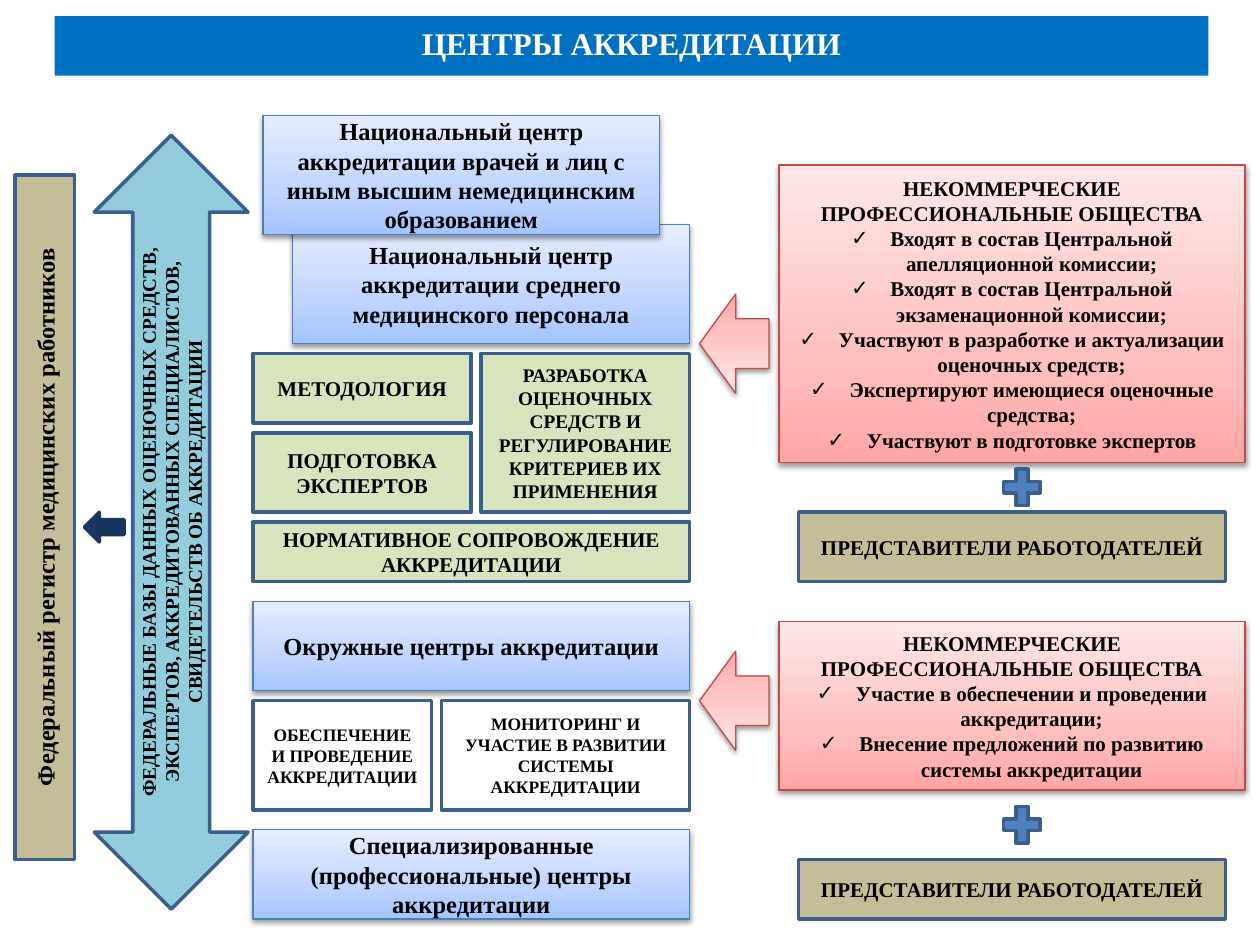
from copy import deepcopy
from typing import NamedTuple

from lxml.etree import SubElement
from pptx import Presentation
from pptx.dml.color import RGBColor
from pptx.enum.shapes import MSO_SHAPE
from pptx.enum.text import MSO_ANCHOR, PP_ALIGN
from pptx.oxml.ns import qn
from pptx.util import Inches, Mm, Pt

CELL = Mm(2)
LEFT_MARGIN = Inches(0.04)
TOP_MARGIN = Inches(0.05)
FONT = "Times New Roman"

BLACK = RGBColor(0x00, 0x00, 0x00)
WHITE = RGBColor(0xFF, 0xFF, 0xFF)
TITLE_BLUE = RGBColor(0x00, 0x70, 0xC0)
PLUS_BLUE = RGBColor(0x4F, 0x81, 0xBD)
EDGE_BLUE = RGBColor(0x3A, 0x5F, 0x8C)
NAVY = RGBColor(0x17, 0x37, 0x5E)
AQUA = RGBColor(0x93, 0xCD, 0xDD)
GREEN = RGBColor(0xD7, 0xE4, 0xBD)
TAN = RGBColor(0xC4, 0xBD, 0x97)
CENTER_EDGE = RGBColor(0x4B, 0x7E, 0xBC)
SOCIETY_EDGE = RGBColor(0xBF, 0x4C, 0x48)
CENTER_BLUES = (
    RGBColor(0xA4, 0xC4, 0xFF), RGBColor(0xBF, 0xD4, 0xFF), RGBColor(0xE6, 0xEE, 0xFF))
SOCIETY_REDS = (
    RGBColor(0xFF, 0xA6, 0xA5), RGBColor(0xFF, 0xC0, 0xBF), RGBColor(0xFF, 0xE7, 0xE7))


class Box(NamedTuple):
    """An area of the grid, in columns and rows."""
    column: float
    row: float
    width: float
    height: float

    def inner(self, column, row, width, height):
        """Return an area placed relative to this one."""
        return Box(self.column + column, self.row + row, width, height)


def add_block(page, box, fill=None, edge=EDGE_BLUE, weight=2, kind=MSO_SHAPE.RECTANGLE):
    """Draw a flat preset shape over a grid area."""
    shape = page.shapes.add_shape(
        kind, LEFT_MARGIN + int(box.column * CELL), TOP_MARGIN + int(box.row * CELL),
        int(box.width * CELL), int(box.height * CELL))
    shape.shadow.inherit = False
    if fill is None:
        shape.fill.background()
    else:
        shape.fill.solid()
        shape.fill.fore_color.rgb = fill
    if edge is None:
        shape.line.fill.background()
    else:
        shape.line.color.rgb = edge
        shape.line.width = Pt(weight)
    return shape


def add_raised_block(page, box, colors, edge, kind=MSO_SHAPE.RECTANGLE):
    """Draw a shape with a vertical gradient and a soft shadow."""
    shape = add_block(page, box, edge=edge, weight=0.75, kind=kind)
    shape.fill.gradient()
    shape.fill.gradient_angle = 90
    properties = shape._element.spPr
    stop_list = properties.find(qn("a:gradFill")).find(qn("a:gsLst"))
    stop_list.append(deepcopy(stop_list[-1]))
    for stop, color, position in zip(shape.fill.gradient_stops, colors, (0, 0.35, 1)):
        stop.color.rgb = color
        stop.position = position
    shadow = SubElement(
        properties.find(qn("a:effectLst")), qn("a:outerShdw"), blurRad=str(Pt(3.1)),
        dist=str(Pt(1.6)), dir="5400000", rotWithShape="0")
    shadow_color = SubElement(shadow, qn("a:srgbClr"), val="000000")
    SubElement(shadow_color, qn("a:alpha"), val="38000")
    return shape


def write(shape, *lines, size=12, color=BLACK, bullets=(), spacing=None, upward=False):
    """Write centred bold paragraphs, then check-marked ones, into a shape."""
    frame = shape.text_frame
    frame.word_wrap = True
    frame.vertical_anchor = MSO_ANCHOR.MIDDLE
    if upward:
        frame._txBody.bodyPr.set("vert", "vert270")
    for index, text in enumerate((*lines, *bullets)):
        para = frame.add_paragraph() if index else frame.paragraphs[0]
        para.alignment = PP_ALIGN.CENTER
        if spacing:
            para.line_spacing = spacing
        if index >= len(lines):
            properties = para._p.get_or_add_pPr()
            properties.set("marL", str(Pt(22.5)))
            properties.set("indent", str(-Pt(22.5)))
            SubElement(properties, qn("a:buFont"), typeface="Arial")
            SubElement(properties, qn("a:buChar"), char="✓")
        span = para.add_run()
        span.text = text
        span.font.name = FONT
        span.font.size = Pt(size)
        span.font.bold = True
        span.font.color.rgb = color


def add_title(page, box):
    """Draw the title band."""
    band = add_block(page, box, TITLE_BLUE, edge=None)
    write(band, "ЦЕНТРЫ АККРЕДИТАЦИИ", size=18, color=WHITE, spacing=0.8)


def add_center(page, box, text):
    """Draw one accreditation center."""
    write(add_raised_block(page, box, CENTER_BLUES, CENTER_EDGE), text, size=14)


def add_registry(page, box):
    """Draw the federal registry, the databases and the arrow between them."""
    databases = add_block(
        page, box.inner(8, -4, 15.5, box.height + 9), AQUA, kind=MSO_SHAPE.UP_DOWN_ARROW)
    write(databases, "ФЕДЕРАЛЬНЫЕ БАЗЫ ДАННЫХ ОЦЕНОЧНЫХ СРЕДСТВ, ЭКСПЕРТОВ, "
          "АККРЕДИТОВАННЫХ СПЕЦИАЛИСТОВ, СВИДЕТЕЛЬСТВ ОБ АККРЕДИТАЦИИ",
          size=11, upward=True)
    add_block(page, box.inner(7, 34, 4, 3), NAVY, edge=NAVY, kind=MSO_SHAPE.LEFT_ARROW)
    registry = add_block(page, box.inner(0, 0, 6, box.height), TAN)
    write(registry, "Федеральный регистр медицинских работников", size=14, upward=True)


def add_national_level(page, box):
    """Draw the two national centers and their tasks."""
    add_center(page, box.inner(4, 11, 40, 12),
               "Национальный центр аккредитации среднего медицинского персонала")
    add_center(page, box.inner(1, 0, 40, 12),
               "Национальный центр аккредитации врачей и лиц с иным высшим "
               "немедицинским образованием")
    tasks = (
        ((0, 24, 22, 7), 12, ("МЕТОДОЛОГИЯ",)),
        ((0, 32, 22, 8), 12, ("ПОДГОТОВКА ЭКСПЕРТОВ",)),
        ((23, 24, 21, 16), 11, ("РАЗРАБОТКА", "ОЦЕНОЧНЫХ",
                                "СРЕДСТВ И РЕГУЛИРОВАНИЕ КРИТЕРИЕВ ИХ ПРИМЕНЕНИЯ")),
        ((0, 41, box.width, 6), 12, ("НОРМАТИВНОЕ СОПРОВОЖДЕНИЕ АККРЕДИТАЦИИ",)),
    )
    for area, size, lines in tasks:
        write(add_block(page, box.inner(*area), GREEN), *lines, size=size)


def add_district_level(page, box):
    """Draw the district centers and their two tasks."""
    add_center(page, box.inner(0, 0, box.width, 9), "Окружные центры аккредитации")
    tasks = (
        ((0, 10, 18, 11), "ОБЕСПЕЧЕНИЕ И ПРОВЕДЕНИЕ АККРЕДИТАЦИИ"),
        ((19, 10, 25, 11), "МОНИТОРИНГ И УЧАСТИЕ В РАЗВИТИИ СИСТЕМЫ АККРЕДИТАЦИИ"),
    )
    for area, text in tasks:
        write(add_block(page, box.inner(*area)), text, size=10)


def add_partners(page, box, society_rows, employer_rows, arrow_row, duties):
    """Draw the societies, a plus, the employers and an arrow to the centers."""
    society = add_raised_block(
        page, box.inner(8, 0, 47, society_rows), SOCIETY_REDS, SOCIETY_EDGE)
    write(society, "НЕКОММЕРЧЕСКИЕ ПРОФЕССИОНАЛЬНЫЕ ОБЩЕСТВА", bullets=duties)
    employer_row = box.height - employer_rows
    plus_row = (society_rows + employer_row - 5) / 2
    add_block(page, box.inner(30, plus_row, 5, 5), PLUS_BLUE, kind=MSO_SHAPE.MATH_PLUS)
    employers = add_block(page, box.inner(10, employer_row, 43, employer_rows), TAN)
    write(employers, "ПРЕДСТАВИТЕЛИ РАБОТОДАТЕЛЕЙ")
    arrow = add_raised_block(page, box.inner(0, arrow_row, 7, 10), SOCIETY_REDS,
                             SOCIETY_EDGE, kind=MSO_SHAPE.RIGHT_ARROW)
    arrow.rotation = 180
    arrow.adjustments[1] = 0.52


def main():
    """Build and save the slide."""
    deck = Presentation()
    deck.slide_width, deck.slide_height = Inches(10), Inches(7.5)
    page = deck.slides.add_slide(deck.slide_layouts[6])
    add_title(page, Box(5, 1, 116.3, 6))
    add_registry(page, Box(1, 17, 23, 69))
    add_national_level(page, Box(25, 11, 44, 47))
    add_district_level(page, Box(25, 60, 44, 21))
    add_center(page, Box(25, 83, 44, 9),
               "Специализированные (профессиональные) центры аккредитации")
    add_partners(page, Box(70, 16, 55, 42), 30, 7, 13, (
        "Входят в состав Центральной апелляционной комиссии;",
        "Входят в состав Центральной экзаменационной комиссии;",
        "Участвуют в разработке и актуализации оценочных средств;",
        "Экспертируют имеющиеся оценочные средства;",
        "Участвуют в подготовке экспертов"))
    add_partners(page, Box(70, 62, 55, 30), 17, 6, 3, (
        "Участие в обеспечении и проведении аккредитации;",
        "Внесение предложений по развитию системы аккредитации"))
    deck.save("out.pptx")


if __name__ == "__main__":
    main()
